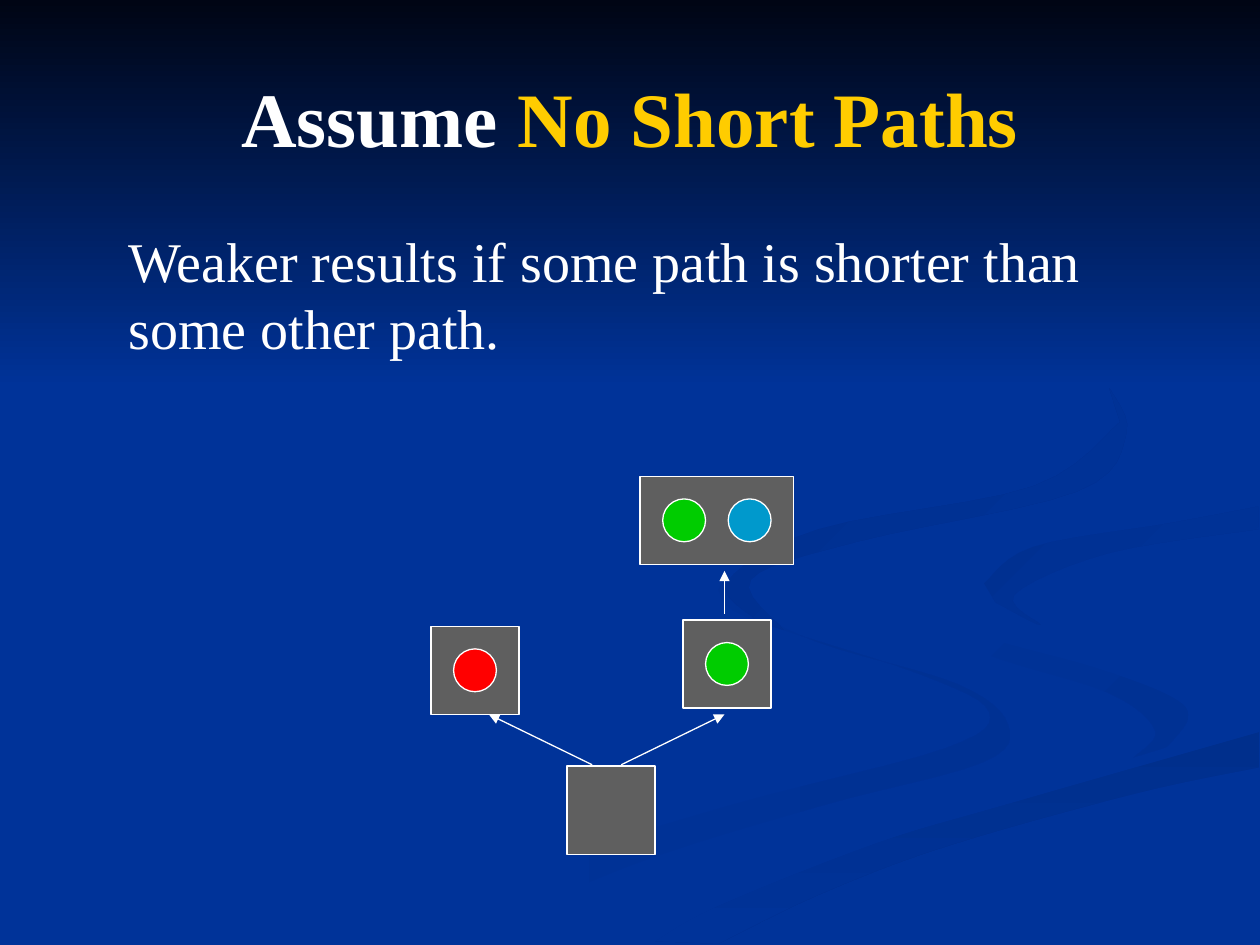
import pptx
import pptx.util
import pptx.dml.color
import pptx.enum.shapes
import pptx.enum.text
import pptx.oxml
import lxml.etree

COLUMNS, ROWS = 100, 75
FONT = "Times New Roman"
WHITE, BLUE, GREY, GREEN = "FFFFFF", "003399", "5F5F5F", "00CC00"

presentation = pptx.Presentation()
presentation.slide_width = pptx.util.Inches(10)
presentation.slide_height = pptx.util.Inches(7.5)
slide = presentation.slides.add_slide(presentation.slide_layouts[6])
shapes = slide.shapes
preset = pptx.enum.shapes.MSO_SHAPE


def color(value):
    return pptx.dml.color.RGBColor.from_string(value)


def grid(*cells):
    """Turn alternating column and row numbers into slide lengths."""
    sizes = (presentation.slide_width / COLUMNS, presentation.slide_height / ROWS)
    return [round(cell * sizes[index % 2]) for index, cell in enumerate(cells)]


# Background
slide.background.fill.solid()
slide.background.fill.fore_color.rgb = color(BLUE)

# Edges that neighbouring ribbons share
bend = [(72.5, 46.4), (76, 49.8), (87, 53), (93, 55.3), (94.3, 57), (92.6, 59.3)]
sweep = [(99.9, 58.1), (80, 63.8), (69.6, 66.9), (57, 71.9), (52, 74.7)]
crest = [(78.1, 46.3), (82, 43.4), (93, 41.5), (99.9, 40.2)]

# Ribbons, then the dark band: start colour, end colour, angle, curved edges
backdrop = [
    (BLUE, "003193", 0, [
        [(57.5, 46), (58.3, 47.7), (65, 51), (76, 54.3), (80, 57.5), (78, 60.5),
         (65, 64), (50, 68.7), (36, 74.9)],
        [(30, 74.9), (42, 69), (58, 63.9), (75, 59.4), (78.5, 56.5), (73, 53.5),
         (59.3, 49), (57, 46.8)]]),
    (BLUE, "003193", 45, [
        bend, [(90, 60.1), (91.7, 58), (88, 55), (78, 51.8), (73, 48.4)]]),
    ("002F8C", BLUE, 90, [
        sweep, [(57, 74.9), (65, 71), (75, 67.2), (90, 63), (99.9, 60.9)]]),
    (BLUE, BLUE, 0, [
        bend + [(87, 61), (74, 64.3), (57, 70.3), (47.7, 74.9)],
        sweep[::-1],
        [(99.9, 53.8), (90, 52), (80.4, 48.5), (78.1, 46.3)],
        crest,
        [(99.9, 38.7), (87, 40.8), (74.2, 44), (72.5, 46.4)]]),
    ("003091", BLUE, 45, [
        crest, [(99.9, 42), (88, 43.9), (80.5, 47.2), (82.6, 49.6), (79, 47.8)]]),
    ("002F8E", BLUE, 45, [
        [(88, 30.7), (89.4, 34.4), (85.5, 39), (68, 43), (59.6, 46), (62.2, 50)],
        [(60, 49.2), (57.7, 46.2), (65, 42), (82, 38.6), (88.9, 33.5)]]),
    ("000514", BLUE, 90, [[(0, 0), (0, 30.8)], [(COLUMNS, 30.8), (COLUMNS, 0)]]),
]
STEPS = 6
for start_color, end_color, angle, edges in backdrop:
    points = []
    for edge in edges:
        # Catmull-Rom curve through the points of the edge
        padded = [edge[0], *edge, edge[-1]]
        for before, start, end, after in zip(padded, padded[1:], padded[2:], padded[3:]):
            for step in range(STEPS):
                t = step / STEPS
                points.append(grid(*(
                    b + t / 2 * (c - a + t * (2 * a - 5 * b + 4 * c - d
                                              + t * (3 * b - a - 3 * c + d)))
                    for a, b, c, d in zip(before, start, end, after))))
        points.append(grid(*edge[-1]))
    builder = shapes.build_freeform(*points[0])
    builder.add_line_segments(points[1:], close=True)
    shape = builder.convert_to_shape()
    shape.shadow.inherit = False
    shape.line.fill.background()
    shape.fill.gradient()
    shape.fill.gradient_angle = 360 - angle
    for stop, stop_color in zip(shape.fill.gradient_stops, (start_color, end_color)):
        stop.color.rgb = color(stop_color)

# Title and statement
anchor, align = pptx.enum.text.MSO_ANCHOR, pptx.enum.text.PP_ALIGN
texts = [
    ((5, 3, 90, 12.5), anchor.MIDDLE, align.CENTER, 44, True,
     [("Assume ", WHITE), ("No Short Paths", "FFCC00")]),
    ((9.2, 17.5, 79.2, 11.8), anchor.TOP, align.LEFT, 32, False,
     [("Weaker results if some path is shorter than some other path.", WHITE)]),
]
for place, vertical, horizontal, size, bold, runs in texts:
    frame = shapes.add_textbox(*grid(*place)).text_frame
    frame.word_wrap = True
    frame.vertical_anchor = vertical
    paragraph = frame.paragraphs[0]
    paragraph.alignment = horizontal
    for text, text_color in runs:
        run = paragraph.add_run()
        run.text = text
        run.font.name = FONT
        run.font.size = pptx.util.Pt(size)
        run.font.bold = bold
        run.font.color.rgb = color(text_color)

# Boxes of the tree, each wide enough for its dots
DOT, GAP = 3.4, 1.8
boxes = [
    (34.2, 49.7, ["FF0000"]),
    (54.2, 49.2, [GREEN]),
    (45, 60.8, []),
    (50.8, 37.8, [GREEN, "0099CC"]),
]
for left, top, dots in boxes:
    width = GAP + max(len(dots), 1) * (DOT + GAP)
    parts = [(preset.RECTANGLE, GREY, (left, top, width, DOT + 2 * GAP))]
    for index, dot_color in enumerate(dots):
        dot_left = left + GAP + index * (DOT + GAP)
        parts.append((preset.OVAL, dot_color, (dot_left, top + GAP, DOT, DOT)))
    for kind, fill_color, place in parts:
        shape = shapes.add_shape(kind, *grid(*place))
        shape.shadow.inherit = False
        shape.fill.solid()
        shape.fill.fore_color.rgb = color(fill_color)
        shape.line.color.rgb = color(WHITE)
        shape.line.width = pptx.util.Pt(0.75)

# Arrows between the boxes
arrows = [(49.3, 60.7, 57.5, 56.7), (47, 60.7, 38.8, 56.7), (57.5, 48.7, 57.5, 45.3)]
for ends in arrows:
    arrow = shapes.add_connector(pptx.enum.shapes.MSO_CONNECTOR.STRAIGHT, *grid(*ends))
    arrow.line.color.rgb = color(WHITE)
    arrow.line.width = pptx.util.Pt(0.75)
    properties = arrow._element.spPr
    head = lxml.etree.SubElement(properties.find(pptx.oxml.ns.qn("a:ln")),
                                 pptx.oxml.ns.qn("a:tailEnd"))
    head.set("type", "triangle")
    lxml.etree.SubElement(properties, pptx.oxml.ns.qn("a:effectLst"))

presentation.save("out.pptx")
